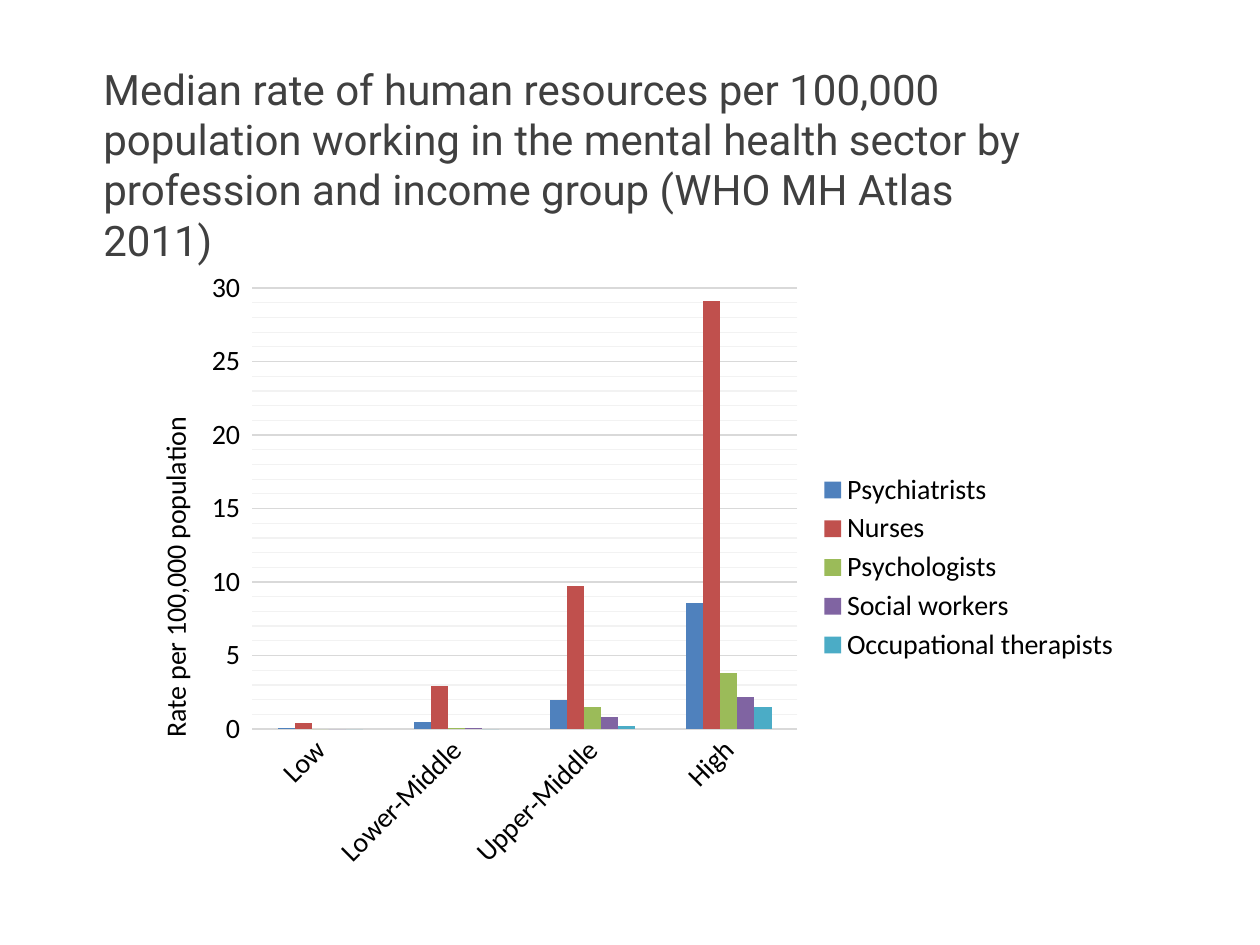
import pptx
import pptx.util
import pptx.dml.color
import pptx.chart.data
import pptx.enum.chart
import pptx.enum.text
import pptx.oxml
import pptx.oxml.ns

# Content
TITLE = ("Median rate of human resources per 100,000 population working in the "
         "mental health sector by profession and income group (WHO MH Atlas 2011)")
AXIS_TITLE = "Rate per 100,000 population"
INCOME_GROUPS = ["Low", "Lower-Middle", "Upper-Middle", "High"]
PROFESSIONS = [
    ("Psychiatrists", "4F81BD", [0.1, 0.5, 2, 8.6]),
    ("Nurses", "C0504D", [0.4, 2.9, 9.7, 29.1]),
    ("Psychologists", "9BBB59", [0, 0.1, 1.5, 3.8]),
    ("Social workers", "8064A2", [0, 0.1, 0.8, 2.2]),
    ("Occupational therapists", "4BACC6", [0, 0, 0.2, 1.5]),
]

# Places: inches on the slide, shares inside the chart
TITLE_BOX = (0.72, 0.45, 7.72, 1.72)
CHART_BOX = (0.96, 2.04, 8.01, 4.93)
PLOT_SHARE = {"x": 0.13, "y": 0.05, "w": 0.54, "h": 0.71}
AXIS_TITLE_SHARE = {"x": 0.03, "y": 0.25}
LEGEND_SHARE = {"x": 0.69, "y": 0.34, "w": 0.3, "h": 0.32}


def color(hex_value):
    return pptx.dml.color.RGBColor.from_string(hex_value)


def inches(box):
    return [pptx.util.Inches(length) for length in box]


def style_font(font, name, size, hex_value):
    font.name = name
    font.size = pptx.util.Pt(size)
    font.bold = False
    font.color.rgb = color(hex_value)


def style_line(line, hex_value):
    line.color.rgb = color(hex_value)
    line.width = pptx.util.Pt(0.75)


def style_minor_gridlines(axis, hex_value):
    gridlines = axis._element.find(pptx.oxml.ns.qn("c:minorGridlines"))
    gridlines.append(pptx.oxml.parse_xml(
        f'<c:spPr {pptx.oxml.ns.nsdecls("c", "a")}><a:ln w="{pptx.util.Pt(0.75)}">'
        f'<a:solidFill><a:srgbClr val="{hex_value}"/></a:solidFill></a:ln></c:spPr>'))


def set_layout(element, index, shares, inner=False):
    """Place a chart part by shares of the chart's size."""
    for old in element.findall(pptx.oxml.ns.qn("c:layout")):
        element.remove(old)
    target = '<c:layoutTarget val="inner"/>' if inner else ""
    modes = "".join(f'<c:{key}Mode val="edge"/>' for key in "xy")
    values = "".join(f'<c:{key} val="{share}"/>' for key, share in shares.items())
    element.insert(index, pptx.oxml.parse_xml(
        f'<c:layout {pptx.oxml.ns.nsdecls("c")}><c:manualLayout>'
        f'{target}{modes}{values}</c:manualLayout></c:layout>'))


def add_title(page):
    title = page.shapes.title
    title.left, title.top, title.width, title.height = inches(TITLE_BOX)
    frame = title.text_frame
    frame.text = TITLE
    frame.word_wrap = True
    frame.auto_size = pptx.enum.text.MSO_AUTO_SIZE.NONE
    frame.vertical_anchor = pptx.enum.text.MSO_ANCHOR.TOP
    para = frame.paragraphs[0]
    para.alignment = pptx.enum.text.PP_ALIGN.LEFT
    style_font(para.runs[0].font, "Roboto", 24, "404040")


def add_rate_chart(page):
    data = pptx.chart.data.CategoryChartData()
    data.categories = INCOME_GROUPS
    for name, _, rates in PROFESSIONS:
        data.add_series(name, rates)
    chart = page.shapes.add_chart(
        pptx.enum.chart.XL_CHART_TYPE.COLUMN_CLUSTERED, *inches(CHART_BOX), data).chart
    chart.has_title = False
    style_font(chart.font, "Calibri", 16, "000000")

    # Columns
    plot = chart.plots[0]
    plot.gap_width = 300
    plot.overlap = 0
    plot.vary_by_categories = False
    for series, (_, fill, _) in zip(plot.series, PROFESSIONS):
        series.format.fill.solid()
        series.format.fill.fore_color.rgb = color(fill)
    set_layout(chart._chartSpace.chart.plotArea, 0, PLOT_SHARE, inner=True)

    # Income group axis, labels slanted upwards
    groups = chart.category_axis
    groups.major_tick_mark = pptx.enum.chart.XL_TICK_MARK.NONE
    style_line(groups.format.line, "D9D9D9")
    style_font(groups.tick_labels.font, "Calibri", 16, "000000")
    label_body = groups._element.find(".//" + pptx.oxml.ns.qn("a:bodyPr"))
    label_body.set("rot", str(-45 * 60000))
    label_body.set("vert", "horz")

    # Rate axis
    rates = chart.value_axis
    rates.minimum_scale, rates.maximum_scale = 0, 30
    rates.major_unit, rates.minor_unit = 5, 1
    rates.has_major_gridlines = rates.has_minor_gridlines = True
    style_line(rates.major_gridlines.format.line, "D9D9D9")
    style_minor_gridlines(rates, "F2F2F2")
    rates.format.line.fill.background()
    style_font(rates.tick_labels.font, "Calibri", 16, "000000")
    rates.tick_labels.number_format = "General"
    rates.tick_labels.number_format_is_linked = False
    frame = rates.axis_title.text_frame
    frame.text = AXIS_TITLE
    style_font(frame.paragraphs[0].runs[0].font, "Calibri", 16, "000000")
    body = frame._txBody.find(pptx.oxml.ns.qn("a:bodyPr"))
    body.set("rot", str(-90 * 60000))
    body.set("vert", "horz")
    set_layout(rates.axis_title._element, 1, AXIS_TITLE_SHARE)

    # Legend
    chart.has_legend = True
    chart.legend.position = pptx.enum.chart.XL_LEGEND_POSITION.RIGHT
    chart.legend.include_in_layout = False
    style_font(chart.legend.font, "Calibri", 16, "000000")
    set_layout(chart.legend._element, 1, LEGEND_SHARE)


def main():
    deck = pptx.Presentation()
    deck.slide_width, deck.slide_height = inches((10, 7.5))
    page = deck.slides.add_slide(deck.slide_layouts[5])
    add_title(page)
    add_rate_chart(page)
    deck.save("out.pptx")


if __name__ == "__main__":
    main()
